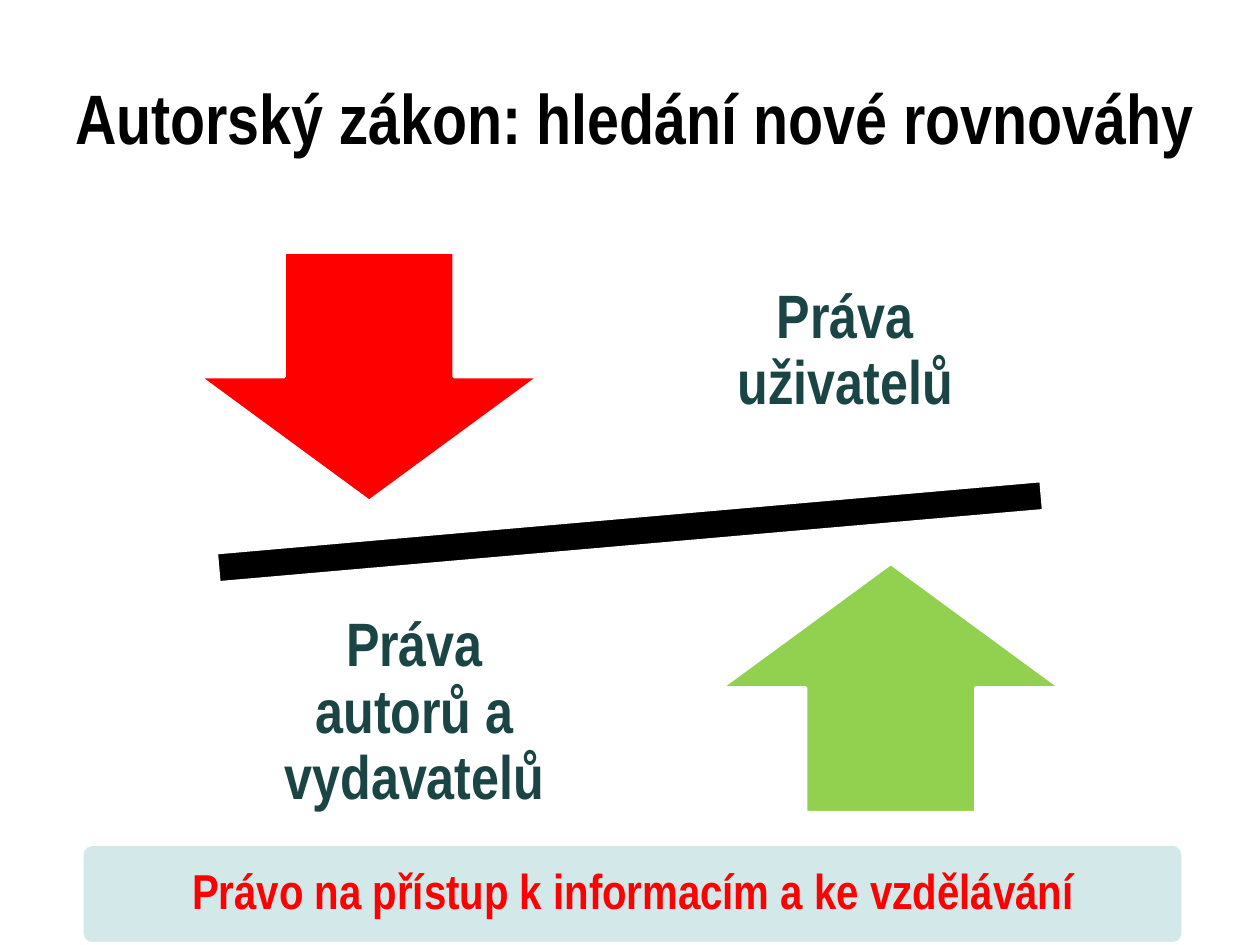
from dataclasses import dataclass

import pptx
import pptx.dml.color
import pptx.enum.shapes
import pptx.enum.text
import pptx.util

Inches = pptx.util.Inches
Pt = pptx.util.Pt
Shape = pptx.enum.shapes.MSO_SHAPE
Color = pptx.dml.color.RGBColor.from_string


@dataclass(frozen=True)
class Theme:
    font: str = "Arial Narrow"
    black: str = "000000"
    white: str = "FFFFFF"
    red: str = "FF0000"
    green: str = "92D050"
    teal: str = "1B4445"
    pale: str = "D3E8E9"
    title_size: int = 40
    label_size: int = 35
    banner_size: int = 28
    outline: int = 2


@dataclass(frozen=True)
class Area:
    left: float
    top: float
    width: float
    height: float

    def lengths(self) -> tuple:
        return tuple(Inches(n) for n in (self.left, self.top, self.width, self.height))


@dataclass(frozen=True)
class Figure:
    kind: Shape
    area: Area
    color: str
    rotation: float = 0
    corner: float | None = None


@dataclass(frozen=True)
class Label:
    text: str
    area: Area


THEME = Theme()
ARROW_SIZE = (2.7, 1.98)
LABEL_SIZE = (2.88, 2.08)

FIGURES = [
    Figure(Shape.MATH_MINUS, Area(0.53, 3.71, 8.94, 1.02), THEME.black, rotation=355),
    Figure(Shape.DOWN_ARROW, Area(1.58, 2, *ARROW_SIZE), THEME.red),
    Figure(Shape.UP_ARROW, Area(5.72, 4.47, *ARROW_SIZE), THEME.green),
    Figure(Shape.ROUNDED_RECTANGLE, Area(0.65, 6.7, 8.74, 0.79), THEME.pale, corner=0.1),
]
LABELS = [
    Label("Práva uživatelů", Area(5.27, 1.75, *LABEL_SIZE)),
    Label("Práva autorů a vydavatelů", Area(1.85, 4.62, *LABEL_SIZE)),
]


def add_figure(page: pptx.slide.Slide, figure: Figure) -> None:
    shape = page.shapes.add_shape(figure.kind, *figure.area.lengths())
    shape.shadow.inherit = False
    shape.rotation = figure.rotation
    if figure.corner is not None:
        shape.adjustments[0] = figure.corner
    shape.fill.solid()
    shape.fill.fore_color.rgb = Color(figure.color)
    shape.line.color.rgb = Color(THEME.white)
    shape.line.width = Pt(THEME.outline)


def add_text(page: pptx.slide.Slide, text: str, area: Area, *, size: int, color: str,
             side_inset: float = 0.1, end_inset: float = 0.05,
             line_spacing: float = 1.0) -> None:
    box = page.shapes.add_textbox(*area.lengths())
    frame = box.text_frame
    frame.word_wrap = True
    frame.vertical_anchor = pptx.enum.text.MSO_ANCHOR.MIDDLE
    frame.margin_left = frame.margin_right = Inches(side_inset)
    frame.margin_top = frame.margin_bottom = Inches(end_inset)
    para = frame.paragraphs[0]
    para.alignment = pptx.enum.text.PP_ALIGN.CENTER
    para.line_spacing = line_spacing
    span = para.add_run()
    span.text = text
    span.font.name = THEME.font
    span.font.size = Pt(size)
    span.font.bold = True
    span.font.color.rgb = Color(color)


def main() -> None:
    deck = pptx.Presentation()
    deck.slide_width, deck.slide_height = Inches(10), Inches(7.5)
    page = deck.slides.add_slide(deck.slide_layouts[6])

    add_text(page, "Autorský zákon: hledání nové rovnováhy", Area(0.27, 0.3, 9.53, 1.25),
             size=THEME.title_size, color=THEME.black)
    for figure in FIGURES:
        add_figure(page, figure)
    for label in LABELS:
        add_text(page, label.text, label.area, size=THEME.label_size, color=THEME.teal,
                 side_inset=0.27, end_inset=0.27, line_spacing=0.9)
    add_text(page, "Právo na přístup k informacím a ke vzdělávání", Area(0.85, 6.72, 8.34, 0.74),
             size=THEME.banner_size, color=THEME.red,
             side_inset=0.06, end_inset=0.04, line_spacing=0.9)

    deck.save("out.pptx")


if __name__ == "__main__":
    main()
